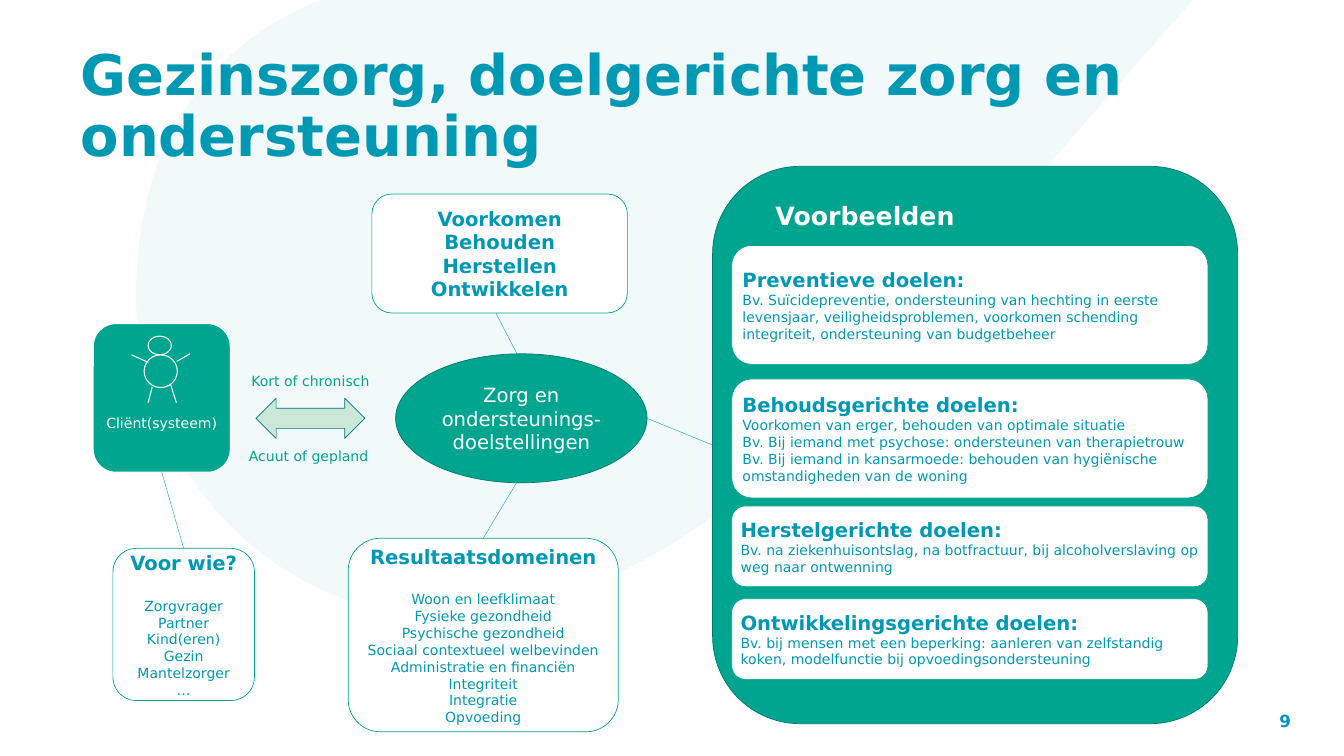
from lxml.etree import SubElement
from pptx import Presentation
from pptx.dml.color import RGBColor
from pptx.enum.shapes import MSO_CONNECTOR, MSO_SHAPE as Preset
from pptx.enum.text import MSO_ANCHOR as Anchor, PP_ALIGN as Align
from pptx.oxml.ns import qn
from pptx.util import Inches, Pt


class Theme:
    font = "DejaVu Sans"
    blue = RGBColor.from_string("0099B3")
    green = RGBColor.from_string("00A590")
    dark_green = RGBColor.from_string("007A6B")
    mint = RGBColor.from_string("CBE7D7")
    petrol = RGBColor.from_string("007184")
    white = RGBColor.from_string("FFFFFF")
    title, panel, heading, number, body = 80, 36, 28, 24, 20


def draw(parent, preset, box, fill, line, width=1):
    shape = parent.add_shape(preset, *map(Inches, box))
    shape.shadow.inherit = False
    shape.fill.solid()
    shape.fill.fore_color.rgb = fill
    shape.line.color.rgb = line
    shape.line.width = Pt(width)
    return shape


def write(shape, lines, size, color, bold=False, align=Align.LEFT, anchor=Anchor.MIDDLE, headed=False):
    frame = shape.text_frame
    frame.word_wrap = True
    frame.vertical_anchor = anchor
    frame.text = "\n".join(lines)
    for index, paragraph in enumerate(frame.paragraphs):
        is_heading = headed and index == 0
        paragraph.alignment = align
        for run in paragraph.runs:
            run.font.name = Theme.font
            run.font.size = Pt(Theme.heading if is_heading else size)
            run.font.bold = bold or is_heading
            run.font.color.rgb = color
    return frame


deck = Presentation()
deck.slide_width, deck.slide_height = Inches(26.67), Inches(15)
slide = deck.slides.add_slide(deck.slide_layouts[6])
shapes = slide.shapes

blob_curves = [
    [(20.66, 3.43), (17.5, 7.02), (13.82, 12.52), (8.2, 12.16)],
    [(8.2, 12.16), (5.67, 12.05), (2.7, 9.56), (2.7, 5.89)],
    [(2.7, 5.89), (2.7, 3.36), (3.66, 1.18), (6.21, 0.06)],
]
blob_points = [(23.7, -0.03), (20.66, 3.43)]
for curve in blob_curves:
    for step in range(1, 41):
        t = step / 40
        weights = [(1 - t) ** 3, 3 * t * (1 - t) ** 2, 3 * t * t * (1 - t), t ** 3]
        blob_points.append(tuple(sum(w * p[axis] for w, p in zip(weights, curve)) for axis in (0, 1)))
outline = shapes.build_freeform(Inches(6.42), Inches(-0.03))
outline.add_line_segments([(Inches(x), Inches(y)) for x, y in blob_points], close=True)
blob = outline.convert_to_shape()
blob.shadow.inherit = False
blob.line.fill.background()
blob.fill.solid()
blob.fill.fore_color.rgb = Theme.blue
blob_color = blob._element.spPr.find(qn("a:solidFill"))[0]
SubElement(blob_color, qn("a:alpha")).set("val", "5000")

captions = [
    ((1.6, 0.94, 22.36, 2.24), "Gezinszorg, doelgerichte zorg en ondersteuning",
     Theme.title, Theme.blue, True, Align.LEFT, Anchor.TOP),
    ((24.68, 13.9, 0.94, 0.8), "9", Theme.number, Theme.blue, True, Align.RIGHT, Anchor.MIDDLE),
    ((4.89, 7.34, 2.69, 0.44), "Kort of chronisch", Theme.body, Theme.green, False, Align.LEFT, Anchor.TOP),
    ((4.84, 8.83, 2.69, 0.44), "Acuut of gepland", Theme.body, Theme.green, False, Align.LEFT, Anchor.TOP),
]
for box, caption, size, color, bold, align, anchor in captions:
    frame = write(shapes.add_textbox(*map(Inches, box)), [caption], size, color, bold, align, anchor)
    if bold:
        frame.margin_left = frame.margin_right = frame.margin_top = frame.margin_bottom = 0
    if size == Theme.title:
        frame.paragraphs[0].line_spacing = 0.9

client_group = shapes.add_group_shape().shapes
client = draw(client_group, Preset.ROUNDED_RECTANGLE, (1.85, 6.42, 2.72, 2.95), Theme.green, Theme.white, 1.5)
client_frame = write(client, ["Cliënt(systeem)"], Theme.body, Theme.white, align=Align.CENTER)
client_frame.margin_top = Inches(1.03)
for body_part in [(2.86, 7.04, 0.66, 0.65), (2.94, 6.67, 0.46, 0.37)]:
    draw(client_group, Preset.OVAL, body_part, Theme.green, Theme.white, 1.5)

draw(shapes, Preset.LEFT_RIGHT_ARROW, (5.08, 7.9, 2.16, 0.8), Theme.mint, Theme.petrol)
care_goals = draw(shapes, Preset.OVAL, (7.85, 7.02, 4.99, 2.56), Theme.green, Theme.dark_green)
write(care_goals, ["Zorg en ondersteunings-doelstellingen"], Theme.heading, Theme.white, align=Align.CENTER)

aims = draw(shapes, Preset.ROUNDED_RECTANGLE, (7.38, 3.85, 5.07, 2.36), Theme.white, Theme.green)
write(aims, ["Voorkomen", "Behouden", "Herstellen", "Ontwikkelen"], Theme.heading, Theme.blue, True, Align.CENTER)

for_whom = draw(shapes, Preset.ROUNDED_RECTANGLE, (2.24, 10.88, 2.81, 3.02), Theme.white, Theme.green)
domains = draw(shapes, Preset.ROUNDED_RECTANGLE, (6.91, 10.68, 5.36, 3.84), Theme.white, Theme.green)
listings = [
    (for_whom, ["Voor wie?", "Zorgvrager", "Partner", "Kind(eren)", "Gezin", "Mantelzorger", "…"]),
    (domains, ["Resultaatsdomeinen", "Woon en leefklimaat", "Fysieke gezondheid", "Psychische gezondheid",
               "Sociaal contextueel welbevinden", "Administratie en financiën", "Integriteit",
               "Integratie", "Opvoeding"]),
]
for listing, lines in listings:
    frame = write(listing, lines, Theme.body, Theme.blue, align=Align.CENTER, headed=True)
    frame.paragraphs[0].space_after = Pt(32.6)

examples = draw(shapes, Preset.ROUNDED_RECTANGLE, (14.14, 3.3, 10.42, 11.06), Theme.green, Theme.dark_green)
examples_title = shapes.add_textbox(Inches(15.29), Inches(3.92), Inches(4.36), Inches(0.71))
write(examples_title, ["Voorbeelden"], Theme.panel, Theme.white, True, anchor=Anchor.TOP)

goals = [
    (4.87, 2.36, ["Preventieve doelen:",
                  "Bv. Suïcidepreventie, ondersteuning van hechting in eerste levensjaar, "
                  "veiligheidsproblemen, voorkomen schending integriteit, ondersteuning van budgetbeheer"]),
    (7.52, 2.36, ["Behoudsgerichte doelen:",
                  "Voorkomen van erger, behouden van optimale situatie",
                  "Bv. Bij iemand met psychose: ondersteunen van therapietrouw",
                  "Bv. Bij iemand in kansarmoede: behouden van hygiënische omstandigheden van de woning"]),
    (10.04, 1.6, ["Herstelgerichte doelen:",
                  "Bv. na ziekenhuisontslag, na botfractuur, bij alcoholverslaving op weg naar ontwenning"]),
    (11.88, 1.6, ["Ontwikkelingsgerichte doelen:",
                  "Bv. bij mensen met een beperking: aanleren van zelfstandig koken, "
                  "modelfunctie bij opvoedingsondersteuning"]),
]
for top, height, lines in goals:
    goal = draw(shapes, Preset.ROUNDED_RECTANGLE, (14.52, top, 9.45, height), Theme.white, Theme.green)
    write(goal, lines, Theme.body, Theme.blue, headed=True)

limbs = [(3.51, 7.17, 3.77, 7.02), (2.61, 7.04, 2.94, 7.19), (3.39, 7.64, 3.5, 7.99), (3.02, 7.68, 2.94, 7.99)]
links = [
    ((3.21, 9.37, 3.64, 10.88), (client, 2), (for_whom, 0)),
    ((10.4, 9.33, 9.59, 10.68), None, (domains, 0)),
    ((9.84, 6.21, 10.31, 7.12), None, None),
    ((12.84, 8.3, 14.14, 8.83), None, (examples, 1)),
]
strokes = [(client_group, limb, None, None, Theme.white, 1.5) for limb in limbs]
strokes += [(shapes, *link, Theme.blue, 0.5) for link in links]
for parent, ends, begin, end, color, width in strokes:
    stroke = parent.add_connector(MSO_CONNECTOR.STRAIGHT, *map(Inches, ends))
    if begin:
        stroke.begin_connect(*begin)
    if end:
        stroke.end_connect(*end)
    stroke.line.color.rgb = color
    stroke.line.width = Pt(width)
    SubElement(stroke._element.spPr, qn("a:effectLst"))

deck.save("out.pptx")
